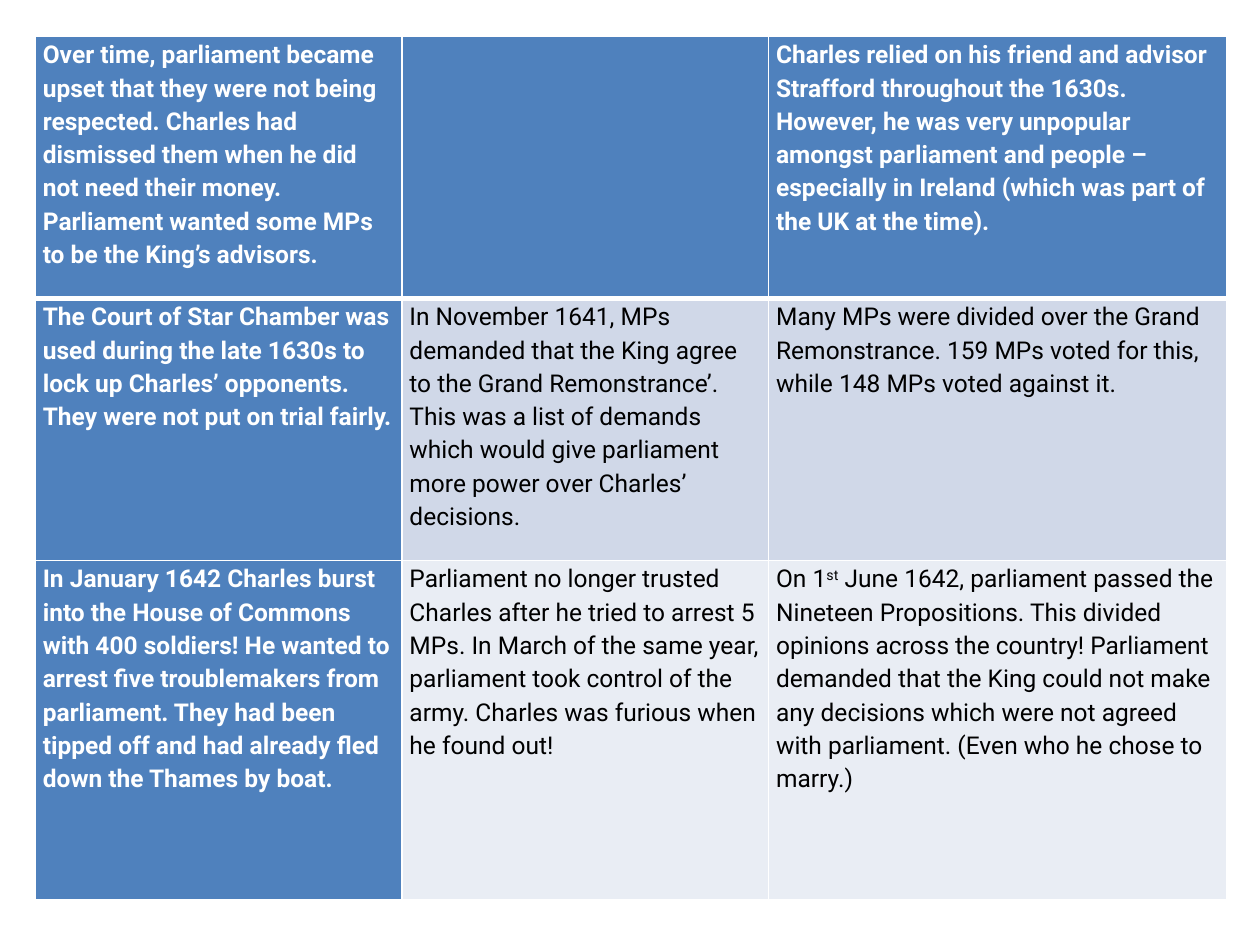
from lxml import etree
from pptx import Presentation
from pptx.dml.color import RGBColor
from pptx.oxml.ns import qn
from pptx.util import Inches, Pt

BLUE, WHITE, BLACK = "4F81BD", "FFFFFF", "000000"
BAND_FILLS = ["D0D8E8", "E9EDF4"]
COLUMN_WIDTHS = [2.91, 2.91, 3.64]
ROW_HEIGHTS = [2.08, 2.08, 2.69]

# Each cell is a list of text pieces; every second piece is superscript
EVENTS = [
    [
        ["Over time, parliament became upset that they were not being respected. "
         "Charles had dismissed them when he did not need their money. "
         "Parliament wanted some MPs to be the King’s advisors."],
        [],
        ["Charles relied on his friend and advisor Strafford throughout the 1630s. "
         "However, he was very unpopular amongst parliament and people – "
         "especially in Ireland (which was part of the UK at the time)."],
    ],
    [
        ["The Court of Star Chamber was used during the late 1630s to lock up "
         "Charles’ opponents. They were not put on trial fairly."],
        ["In November 1641, MPs demanded that the King agree to the Grand "
         "Remonstrance’. This was a list of demands which would give parliament "
         "more power over Charles’ decisions."],
        ["Many MPs were divided over the Grand Remonstrance. 159 MPs voted for "
         "this, while 148 MPs voted against it."],
    ],
    [
        ["In January 1642 Charles burst into the House of Commons with 400 "
         "soldiers! He wanted to arrest five troublemakers from parliament. They "
         "had been tipped off and had already fled down the Thames by boat."],
        ["Parliament no longer trusted Charles after he tried to arrest 5 MPs. "
         "In March of the same year, parliament took control of the army. "
         "Charles was furious when he found out!"],
        ["On 1", "st",
         " June 1642, parliament passed the Nineteen Propositions. This divided "
         "opinions across the country! Parliament demanded that the King could "
         "not make any decisions which were not agreed with parliament. "
         "(Even who he chose to marry.)"],
    ],
]


def add_text(paragraph, text, color=BLACK, bold=False, superscript=False):
    run = paragraph.add_run()
    run.text = text
    run.font.name = "Roboto"
    run.font.size = Pt(14)
    run.font.bold = bold
    run.font.color.rgb = RGBColor.from_string(color)
    if superscript:
        run.font._element.set("baseline", "30000")


def add_border(cell, side, width):
    line = etree.SubElement(cell._tc.get_or_add_tcPr(), qn(f"a:ln{side}"), w=str(Pt(width)))
    fill = etree.SubElement(line, qn("a:solidFill"))
    etree.SubElement(fill, qn("a:srgbClr"), val=WHITE)


prs = Presentation()
prs.slide_width, prs.slide_height = Inches(10), Inches(7.5)
slide = prs.slides.add_slide(prs.slide_layouts[6])

# Table grid
timeline = slide.shapes.add_table(
    len(ROW_HEIGHTS), len(COLUMN_WIDTHS), Inches(0.28), Inches(0.29),
    Inches(sum(COLUMN_WIDTHS)), Inches(sum(ROW_HEIGHTS))).table
timeline.first_col = True
for column, width in zip(timeline.columns, COLUMN_WIDTHS):
    column.width = Inches(width)
for row, height in zip(timeline.rows, ROW_HEIGHTS):
    row.height = Inches(height)

# Cells: the first row and first column are headings
for r, event_row in enumerate(EVENTS):
    for c, pieces in enumerate(event_row):
        cell = timeline.cell(r, c)
        heading = r == 0 or c == 0
        cell.margin_left = cell.margin_right = Inches(0.06)
        cell.margin_top = cell.margin_bottom = 0

        # Borders, with a thick rule under the first row
        for side in "LRTB":
            thick = (r, side) in [(0, "B"), (1, "T")]
            add_border(cell, side, 3 if thick else 1)
        cell.fill.solid()
        cell.fill.fore_color.rgb = RGBColor.from_string(BLUE if heading else BAND_FILLS[r - 1])

        # Text
        paragraph = cell.text_frame.paragraphs[0]
        paragraph.line_spacing = 1.15
        for i, piece in enumerate(pieces):
            add_text(paragraph, piece, color=WHITE if heading else BLACK,
                     bold=heading, superscript=i % 2 == 1)

prs.save("out.pptx")
